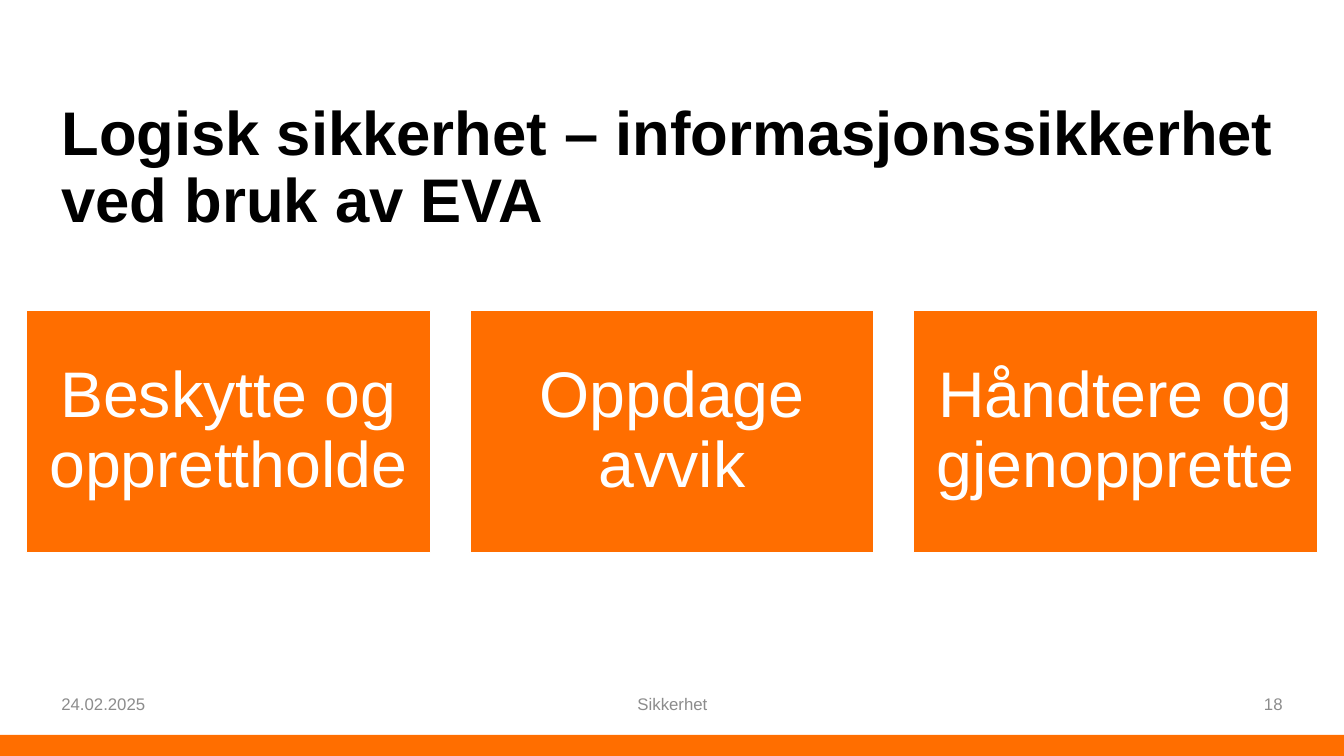
from pptx import Presentation
from pptx.dml.color import RGBColor
from pptx.enum.shapes import MSO_SHAPE
from pptx.enum.text import MSO_ANCHOR, MSO_AUTO_SIZE, PP_ALIGN
from pptx.util import Inches, Pt

ORANGE = RGBColor(0xFF, 0x6E, 0x00)
WHITE = RGBColor(0xFF, 0xFF, 0xFF)
BLACK = RGBColor(0x00, 0x00, 0x00)
GREY = RGBColor(0x8C, 0x8C, 0x8C)

SLIDE_WIDTH, SLIDE_HEIGHT = 13.33, 7.5
MARGIN = 0.51
CARD_LEFT, CARD_STEP = 0.26, 4.4
CARDS = ["Beskytte og opprettholde", "Oppdage avvik", "Håndtere og gjenopprette"]
FOOTERS = [
    ("24.02.2025", MARGIN, 3, PP_ALIGN.LEFT),
    ("Sikkerhet", 4.42, 4.5, PP_ALIGN.CENTER),
    ("18", 9.82, 3, PP_ALIGN.RIGHT),
]


class SlideBuilder:
    font_name = "Arial"

    def __init__(self, slide):
        self.slide = slide

    def set_text(self, shape, text, size, color, align, bold=False, spacing=1.0):
        """Put one middle-anchored, wrapped paragraph into a shape."""
        frame = shape.text_frame
        frame.word_wrap = True
        frame.auto_size = MSO_AUTO_SIZE.NONE
        frame.vertical_anchor = MSO_ANCHOR.MIDDLE
        para = frame.paragraphs[0]
        para.text = text
        para.alignment = align
        para.line_spacing = spacing
        para.font.name = self.font_name
        para.font.size = Pt(size)
        para.font.bold = bold
        para.font.color.rgb = color

    def title(self, text, left, top, width, height):
        title = self.slide.shapes.title
        title.left, title.top = Inches(left), Inches(top)
        title.width, title.height = Inches(width), Inches(height)
        self.set_text(title, text, 44, BLACK, PP_ALIGN.LEFT, bold=True, spacing=0.9)

    def rectangle(self, left, top, width, height):
        box = self.slide.shapes.add_shape(
            MSO_SHAPE.RECTANGLE, Inches(left), Inches(top), Inches(width), Inches(height)
        )
        box.shadow.inherit = False
        box.fill.solid()
        box.fill.fore_color.rgb = ORANGE
        box.line.fill.background()
        return box

    def card(self, text, left, top, width, height):
        box = self.rectangle(left, top, width, height)
        box.line.color.rgb = WHITE
        box.line.width = Pt(1)
        frame = box.text_frame
        frame.margin_left = frame.margin_right = Inches(0.19)
        frame.margin_top = frame.margin_bottom = Inches(0.19)
        self.set_text(box, text, 46, WHITE, PP_ALIGN.CENTER, spacing=0.9)

    def footer(self, text, left, width, align):
        box = self.slide.shapes.add_textbox(
            Inches(left), Inches(6.78), Inches(width), Inches(0.4)
        )
        self.set_text(box, text, 12, GREY, align)


def main():
    deck = Presentation()
    deck.slide_width, deck.slide_height = Inches(SLIDE_WIDTH), Inches(SLIDE_HEIGHT)
    title_only = deck.slide_layouts.get_by_name("Title Only")
    builder = SlideBuilder(deck.slides.add_slide(title_only))

    builder.rectangle(0, 7.29, SLIDE_WIDTH, 0.21)
    builder.title(
        "Logisk sikkerhet – informasjonssikkerhet ved bruk av EVA", MARGIN, 0.95, 12.31, 1.45
    )
    for text, left, width, align in FOOTERS:
        builder.footer(text, left, width, align)
    for index, text in enumerate(CARDS):
        builder.card(text, CARD_LEFT + index * CARD_STEP, 3.08, 4.01, 2.4)

    deck.save("out.pptx")


if __name__ == "__main__":
    main()
